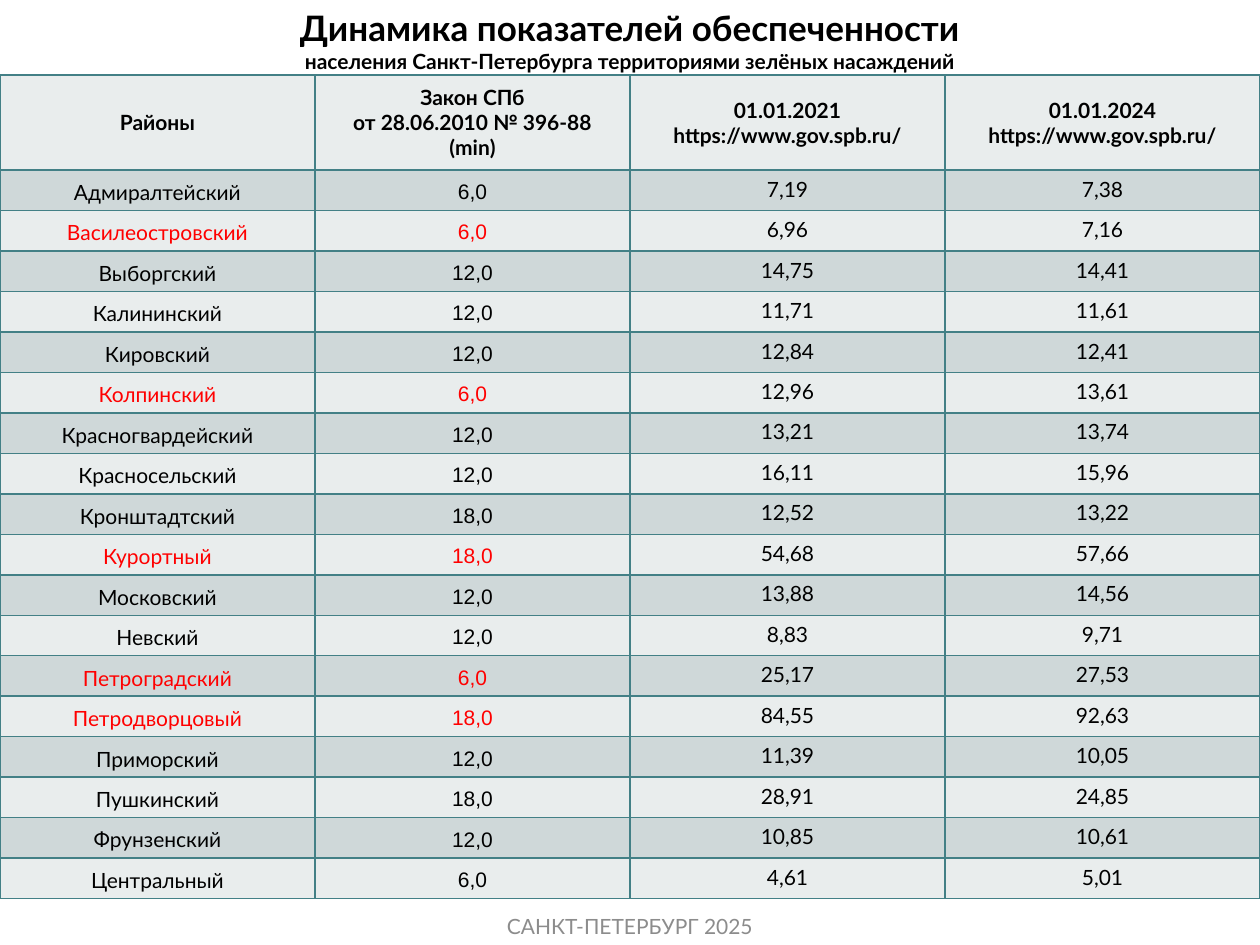
"""Build the slide on green-space provision in the districts of Saint Petersburg."""
from pptx import Presentation, util as u
from pptx.dml.color import RGBColor
from pptx.enum import text
from pptx.oxml import parse_xml
from pptx.oxml.ns import nsdecls

HEADINGS = ("Динамика показателей обеспеченности",
            "населения Санкт-Петербурга территориями зелёных насаждений")
FOOTER = "САНКТ-ПЕТЕРБУРГ 2025"
HEADER = ("Районы", "Закон СПб\nот 28.06.2010 № 396-88 (min)",
          "01.01.2021\nhttps://www.gov.spb.ru/", "01.01.2024\nhttps://www.gov.spb.ru/")
DISTRICTS = [
    ("Адмиралтейский", "6,0", "7,19", "7,38"),
    ("Василеостровский", "6,0", "6,96", "7,16"),
    ("Выборгский", "12,0", "14,75", "14,41"),
    ("Калининский", "12,0", "11,71", "11,61"),
    ("Кировский", "12,0", "12,84", "12,41"),
    ("Колпинский", "6,0", "12,96", "13,61"),
    ("Красногвардейский", "12,0", "13,21", "13,74"),
    ("Красносельский", "12,0", "16,11", "15,96"),
    ("Кронштадтский", "18,0", "12,52", "13,22"),
    ("Курортный", "18,0", "54,68", "57,66"),
    ("Московский", "12,0", "13,88", "14,56"),
    ("Невский", "12,0", "8,83", "9,71"),
    ("Петроградский", "6,0", "25,17", "27,53"),
    ("Петродворцовый", "18,0", "84,55", "92,63"),
    ("Приморский", "12,0", "11,39", "10,05"),
    ("Пушкинский", "18,0", "28,91", "24,85"),
    ("Фрунзенский", "12,0", "10,85", "10,61"),
    ("Центральный", "6,0", "4,61", "5,01"),
]
HIGHLIGHTED = {"Василеостровский", "Колпинский", "Курортный", "Петроградский", "Петродворцовый"}
LIGHT, DARK, BORDER = "E9EDED", "CFD8D9", "438086"
BLACK, RED, GREY, WHITE = "000000", "FF0000", "8C8C8C", "FFFFFF"
WIDTH, HEIGHT = 1260, 945
TABLE_TOP, TABLE_HEIGHT, HEADER_HEIGHT = 75, 824, 95


def px(length):
    return u.Emu(round(length * 914400 / 126))


def paint(fill, color):
    fill.solid()
    fill.fore_color.rgb = RGBColor.from_string(color)


def style(paragraph, size=12, color=BLACK, bold=False, font="Lato"):
    paragraph.alignment = text.PP_ALIGN.CENTER
    for run in paragraph.runs:
        run.font.size, run.font.bold, run.font.name = u.Pt(size), bold, font
        run.font.color.rgb = RGBColor.from_string(color)


def add_borders(cell):
    properties = cell._tc.get_or_add_tcPr()
    for position, side in enumerate("LRTB"):
        properties.insert(position, parse_xml(
            f'<a:ln{side} {nsdecls("a")} w="12700"><a:solidFill>'
            f'<a:srgbClr val="{BORDER}"/></a:solidFill></a:ln{side}>'))


def add_title(slide):
    title = slide.shapes.title
    title.left, title.top, title.width, title.height = px(0), px(0), px(WIDTH), px(81)
    paint(title.fill, WHITE)
    frame = title.text_frame
    frame.text = "\n".join(HEADINGS)
    frame.vertical_anchor = text.MSO_ANCHOR.TOP
    frame.auto_size = text.MSO_AUTO_SIZE.SHAPE_TO_FIT_TEXT
    for paragraph, size in zip(frame.paragraphs, (20, 12)):
        paragraph.space_before = u.Pt(0)
        style(paragraph, size, bold=True)


def fill_cell(cell, words, row, column, highlighted):
    paint(cell.fill, DARK if row % 2 else LIGHT)
    add_borders(cell)
    cell.text_frame.text = words
    is_header, is_norm = row == 0, row > 0 and column < 2
    if is_header or is_norm:
        cell.vertical_anchor = text.MSO_ANCHOR.MIDDLE
    if is_norm:
        cell.margin_left = cell.margin_right = px(9)
        cell.margin_top = cell.margin_bottom = 0
    for paragraph in cell.text_frame.paragraphs:
        if is_norm:
            paragraph.line_spacing = 1.15
        style(paragraph, color=RED if is_norm and highlighted else BLACK, bold=is_header,
              font="Arial" if is_norm and column == 1 else "Lato")


def add_districts(slide):
    rows = [HEADER, *DISTRICTS]
    table = slide.shapes.add_table(len(rows), len(HEADER), px(0), px(TABLE_TOP),
                                   px(WIDTH), px(TABLE_HEIGHT)).table
    for column in table.columns:
        column.width = px(WIDTH / len(HEADER))
    district_height = (TABLE_HEIGHT - HEADER_HEIGHT) / len(DISTRICTS)
    for row, entries in enumerate(rows):
        table.rows[row].height = px(district_height if row else HEADER_HEIGHT)
        for column, words in enumerate(entries):
            fill_cell(table.cell(row, column), words, row, column, entries[0] in HIGHLIGHTED)


def add_footer(slide):
    frame = slide.shapes.add_textbox(px(361), px(907), px(538), px(38)).text_frame
    frame.word_wrap = True
    frame.vertical_anchor = text.MSO_ANCHOR.MIDDLE
    frame.text = FOOTER
    style(frame.paragraphs[0], color=GREY)


def main():
    deck = Presentation()
    deck.slide_width, deck.slide_height = px(WIDTH), px(HEIGHT)
    slide = deck.slides.add_slide(deck.slide_layouts[5])
    add_title(slide)
    add_districts(slide)
    add_footer(slide)
    deck.save("out.pptx")


if __name__ == "__main__":
    main()
